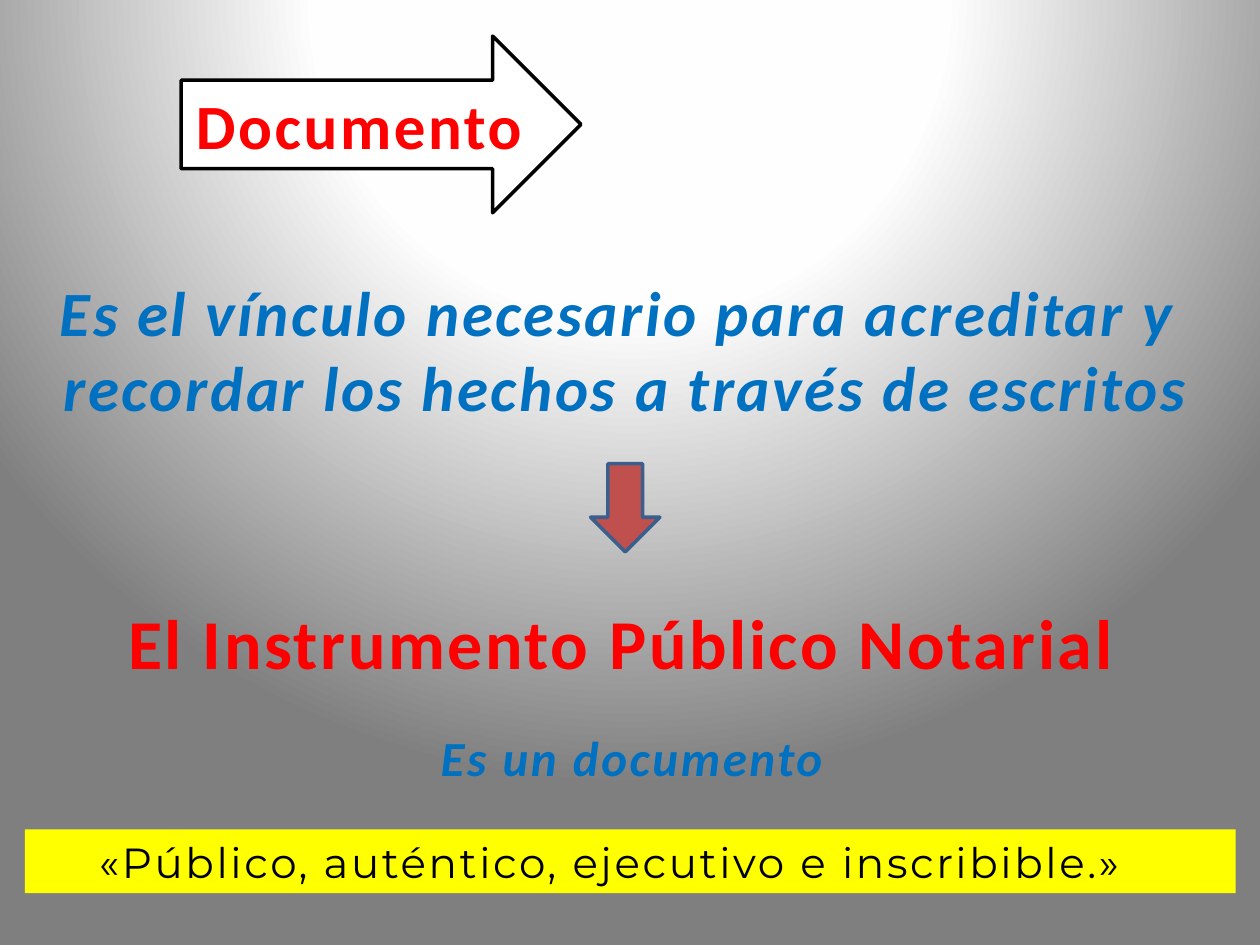
from pptx import Presentation
from pptx import util as u
from pptx.dml.color import RGBColor
from pptx.enum import shapes, text
from pptx.oxml import parse_xml
from pptx.oxml.ns import nsdecls, qn

RED, BLUE, BLACK = "FF0000", "0070C0", "000000"
STOPS = [(0, "FFFFFF"), (40, "FEFEFE"), (100, "7F7F7F")]
FOCUS = {"l": 50, "t": -80, "r": 50, "b": 180}

# Text styles: size, font, colour, bold, italic
LABEL = (36, "Calibri", RED, True, False)
DEFINITION = (36, "Calibri", BLUE, True, True)
HEADING = (40, "Calibri", RED, True, False)
SUBTITLE = (28, "Calibri", BLUE, True, True)
QUOTE = (24, "Montserrat", BLACK, False, False)

# Text boxes: left, top, width, height, lines, style
TEXTS = [
    (23, 152.5, 669, 94.5, ["Es el vínculo necesario para acreditar y ",
                            "recordar los hechos a través de escritos"], DEFINITION),
    (51, 339, 618.5, 55.5, ["El Instrumento Público Notarial "], HEADING),
    (242.5, 412, 237, 41, ["Es un documento"], SUBTITLE),
]


def rgb(value):
    return RGBColor.from_string(value)


def write(sp, lines, style, wrap=False):
    size, font, color, bold, italic = style
    tf = sp.text_frame
    tf.word_wrap = wrap
    tf.auto_size = text.MSO_AUTO_SIZE.SHAPE_TO_FIT_TEXT
    for i, line in enumerate(lines):
        p = tf.add_paragraph() if i else tf.paragraphs[0]
        p.alignment = text.PP_ALIGN.CENTER
        r = p.add_run()
        r.text = line
        f = r.font
        f.size, f.name, f.bold, f.italic = u.Pt(size), font, bold, italic
        f.color.rgb = rgb(color)
        r._r.get_or_add_rPr().set("spc", "150")


def add_shape(s, kind, box, fill, line=None):
    sp = s.shapes.add_shape(kind, *map(u.Pt, box))
    sp.shadow.inherit = False
    sp.fill.solid()
    sp.fill.fore_color.rgb = rgb(fill)
    if line:
        sp.line.color.rgb = rgb(line)
        sp.line.width = u.Pt(2)
    else:
        sp.line.fill.background()
    return sp


def set_background(s):
    s.background.fill.gradient()
    old = s._element.find(".//" + qn("a:gradFill"))
    stops = "".join(f'<a:gs pos="{pos * 1000}"><a:srgbClr val="{c}"/></a:gs>'
                    for pos, c in STOPS)
    focus = " ".join(f'{side}="{v * 1000}"' for side, v in FOCUS.items())
    new = parse_xml(
        f'<a:gradFill {nsdecls("a")} rotWithShape="1"><a:gsLst>{stops}</a:gsLst>'
        f'<a:path path="circle"><a:fillToRect {focus}/></a:path></a:gradFill>')
    old.getparent().replace(old, new)


def main():
    prs = Presentation()
    prs.slide_width, prs.slide_height = u.Pt(720), u.Pt(540)
    s = prs.slides.add_slide(prs.slide_layouts[6])
    set_background(s)
    kinds = shapes.MSO_SHAPE

    # Title arrow
    sp = add_shape(s, kinds.RIGHT_ARROW, (103.5, 20.6, 228.5, 101), "FFFFFF", BLACK)
    write(sp, ["Documento"], LABEL)

    # Definition, heading and subtitle
    for *box, lines, style in TEXTS:
        write(s.shapes.add_textbox(*map(u.Pt, box)), lines, style)

    # Arrow from definition to heading
    add_shape(s, kinds.DOWN_ARROW, (337.5, 265, 39.6, 50.4), "C0504D", "3A5F8C")

    # Yellow quote band, its text shifted left by a wider right inset
    sp = add_shape(s, kinds.RECTANGLE, (14.2, 474, 692, 36.35), "FFFF00")
    write(sp, ["«Público, auténtico, ejecutivo e inscribible.»"], QUOTE, wrap=True)
    sp.text_frame.margin_right = u.Pt(30.6)

    prs.save("out.pptx")


if __name__ == "__main__":
    main()
